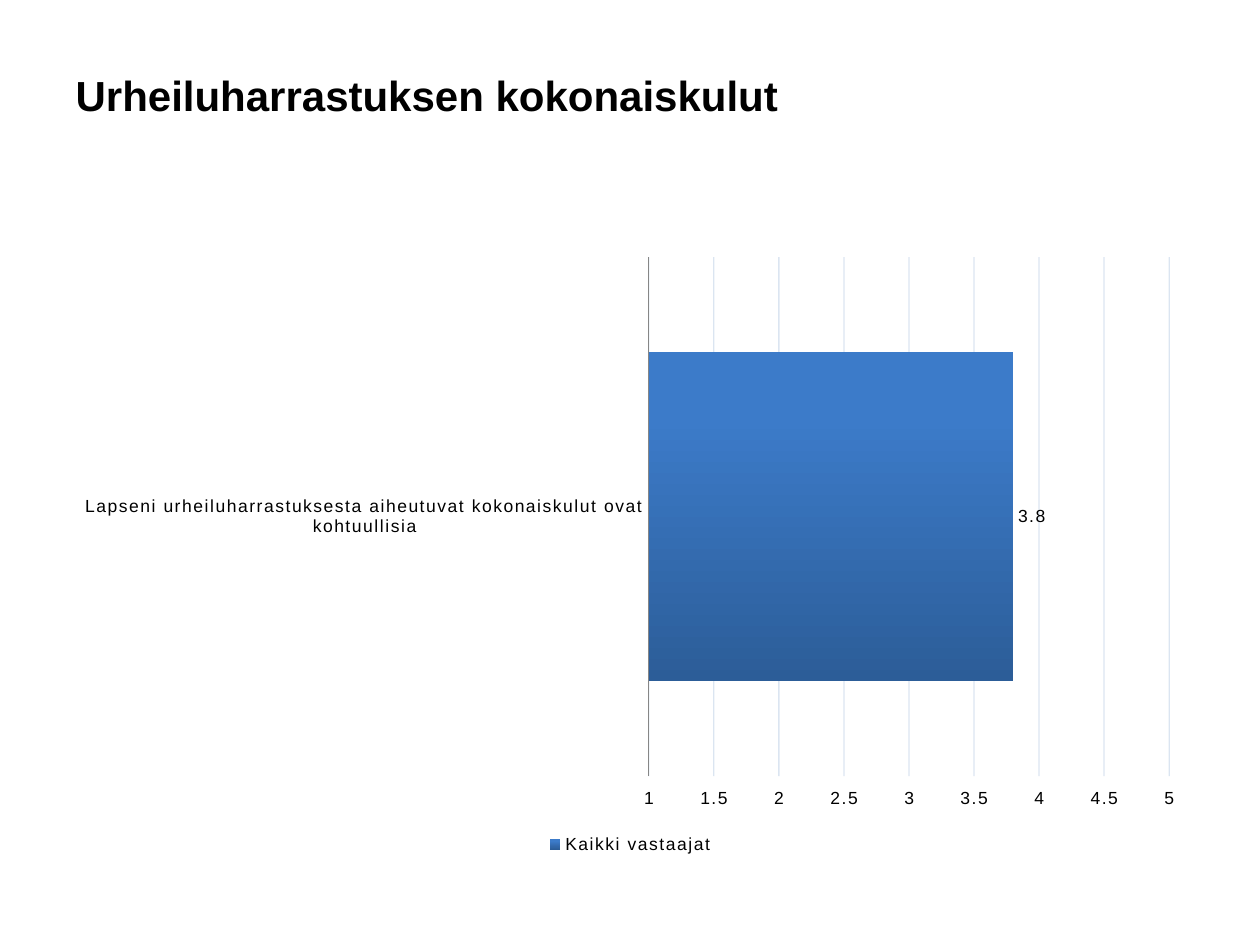
from dataclasses import dataclass
from lxml.etree import SubElement
from pptx import Presentation
from pptx.chart.data import CategoryChartData as Data
from pptx.dml.color import RGBColor as RGB
from pptx.enum.chart import XL_CHART_TYPE as Kind
from pptx.enum.chart import XL_LABEL_POSITION as Spot
from pptx.enum.chart import XL_LEGEND_POSITION as Side
from pptx.enum.chart import XL_TICK_LABEL_POSITION as Place
from pptx.enum.chart import XL_TICK_MARK as Tick
from pptx.enum.text import MSO_ANCHOR as Anchor
from pptx.enum.text import PP_ALIGN as Align
from pptx.oxml import parse_xml
from pptx.oxml.ns import nsdecls, qn
from pptx.util import Pt

PX = 914400 // 100  # one px is a hundredth of an inch


@dataclass(frozen=True)
class Theme:
    font: str = "Arial"
    ink: RGB = RGB(0, 0, 0)
    axis: RGB = RGB(0x86, 0x86, 0x86)
    grid: RGB = RGB(0x4F, 0x81, 0xBD)
    low: RGB = RGB(0x2C, 0x5D, 0x98)
    high: RGB = RGB(0x3C, 0x7B, 0xC9)
    head: int = 24
    body: int = 10
    track: int = 100  # letter spacing, hundredths of a point


THEME = Theme()


def style(font, size, bold=False):
    font.name, font.size, font.bold = THEME.font, Pt(size), bold
    font.color.rgb = THEME.ink


def add_title(slide, box):
    title = slide.shapes.title
    title.left, title.top, title.width, title.height = (n * PX for n in box)
    frame = title.text_frame
    frame.text = "Urheiluharrastuksen kokonaiskulut"
    frame.vertical_anchor = Anchor.MIDDLE
    para = frame.paragraphs[0]
    para.alignment = Align.LEFT
    style(para.runs[0].font, THEME.head, True)


def set_plot(chart, box, inner):
    """Fix the inner plot area, given in px from the corner of the box."""
    area = chart._chartSpace.find(".//" + qn("c:plotArea"))
    old = area.find(qn("c:layout"))
    if old is not None:
        area.remove(old)
    wide, high = box[2:]
    modes = '<c:xMode val="edge"/><c:yMode val="edge"/>'
    sizes = "".join(f'<c:{key} val="{part / whole}"/>' for key, part, whole
                    in zip("xywh", inner, (wide, high, wide, high)))
    area.insert(0, parse_xml(
        f'<c:layout {nsdecls("c")}><c:manualLayout>'
        f'<c:layoutTarget val="inner"/>{modes}{sizes}'
        '</c:manualLayout></c:layout>'))


def set_axes(chart):
    cat, val = chart.category_axis, chart.value_axis
    for axis in (cat, val):
        axis.major_tick_mark = axis.minor_tick_mark = Tick.NONE
        style(axis.tick_labels.font, THEME.body)

    # Categories run downwards, so the values are labelled at the far end
    cat.reverse_order = True
    val.tick_label_position = Place.HIGH
    cat.format.line.color.rgb = THEME.axis
    cat.format.line.width = Pt(0.75)

    val.minimum_scale, val.maximum_scale, val.major_unit = 1, 5, 0.5
    val.tick_labels.number_format = "General"
    val.tick_labels.number_format_is_linked = False
    val.format.line.fill.background()
    line = val.major_gridlines.format.line
    line.color.rgb, line.width = THEME.grid, Pt(0.75)
    tint = val._element.find(".//" + qn("c:majorGridlines")).find(
        ".//" + qn("a:srgbClr"))
    SubElement(tint, qn("a:alpha")).set("val", "20000")


def set_bar(plot):
    plot.gap_width, plot.vary_by_categories = 58, False
    bar = plot.series[0]
    fill = bar.format.fill
    fill.gradient()
    fill.gradient_angle = 90
    stops = zip(fill.gradient_stops, (0, 0.8), (THEME.low, THEME.high))
    for stop, place, color in stops:
        stop.position, stop.color.rgb = place, color
    tags = bar.data_labels
    tags.show_value = True
    tags.position = Spot.OUTSIDE_END
    style(tags.font, THEME.body)


def add_bars(slide, box):
    data = Data(number_format="General")
    data.categories = ["Lapseni urheiluharrastuksesta aiheutuvat "
                       "kokonaiskulut ovat kohtuullisia"]
    data.add_series("Kaikki vastaajat", [3.8])
    chart = slide.shapes.add_chart(
        Kind.BAR_CLUSTERED, *(n * PX for n in box), data).chart
    chart.has_title = False
    style(chart.font, THEME.body)
    set_axes(chart)
    set_bar(chart.plots[0])
    set_plot(chart, box, (465, 10, 413, 412))

    # Legend
    chart.has_legend = True
    chart.legend.position = Side.BOTTOM
    chart.legend.include_in_layout = False
    style(chart.legend.font, THEME.body)

    # Wide letter spacing for all chart text
    for props in chart._chartSpace.iter(qn("a:defRPr")):
        props.set("spc", str(THEME.track))


def main():
    deck = Presentation()
    deck.slide_width, deck.slide_height = 1000 * PX, 750 * PX
    slide = deck.slides.add_slide(deck.slide_layouts[5])
    add_title(slide, (50, 36, 900, 79))
    add_bars(slide, (50, 194, 900, 488))
    deck.save("out.pptx")


if __name__ == "__main__":
    main()
